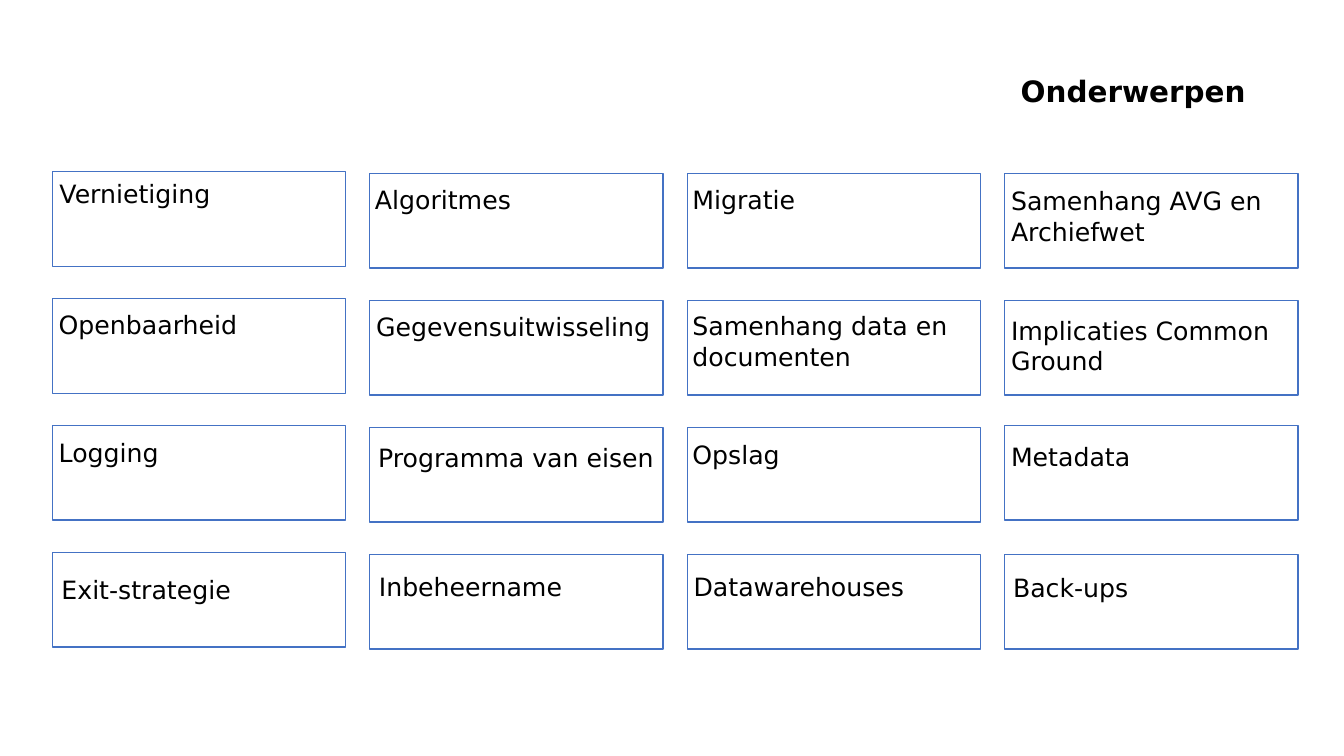
from dataclasses import dataclass

import pptx
import pptx.dml.color
import pptx.enum.shapes
import pptx.enum.text
import pptx.util
from pptx.util import Cm


@dataclass(frozen=True)
class Theme:
    font: str = "DejaVu Sans"
    text: str = "000000"
    fill: str = "FFFFFF"
    line: str = "4472C4"
    title_size: float = 21
    topic_size: float = 18
    line_width: float = 1


@dataclass(frozen=True)
class Topic:
    label: str
    dx: float
    dy: float
    lines: int = 1
    raised: bool = False


THEME = Theme()
LEFT, TOP = 1.32, 4.37
COLUMN_STEP, ROW_STEP = 8, 3.2
BOX_WIDTH, BOX_HEIGHT = 7.39, 2.39
RAISE, INSET = 0.05, 0.13
LABEL_HEIGHTS = {1: 1.02, 2: 1.8}

COLUMNS = [
    [
        Topic("Vernietiging", 0.05, 0, raised=True),
        Topic("Openbaarheid", 0.03, 0.1, raised=True),
        Topic("Logging", 0.03, 0.13, raised=True),
        Topic("Exit-strategie", 0.1, 0.38, raised=True),
    ],
    [
        Topic("Algoritmes", 0, 0.15),
        Topic("Gegevensuitwisseling", 0.03, 0.15),
        Topic("Programma van eisen", 0.08, 0.25),
        Topic("Inbeheername", 0.1, 0.3),
    ],
    [
        Topic("Migratie", 0, 0.15),
        Topic("Samenhang data en documenten", 0, 0.13, lines=2),
        Topic("Opslag", 0, 0.18),
        Topic("Datawarehouses", 0.03, 0.3),
    ],
    [
        Topic("Samenhang AVG en Archiefwet", 0.03, 0.18, lines=2),
        Topic("Implicaties Common Ground", 0.03, 0.25, lines=2),
        Topic("Metadata", 0.03, 0.23, raised=True),
        Topic("Back-ups", 0.08, 0.33),
    ],
]


def rgb(value: str) -> pptx.dml.color.RGBColor:
    return pptx.dml.color.RGBColor.from_string(value)


def set_all(target: object, values: dict) -> None:
    for name, value in values.items():
        setattr(target, name, value)


def add_text(s, text: str, x: float, y: float, w: float, h: float,
             size: float, frame: dict, paragraph: dict, bold: bool = False) -> None:
    tf = s.shapes.add_textbox(Cm(x), Cm(y), Cm(w), Cm(h)).text_frame
    margins = {f"margin_{side}": Cm(INSET) for side in ("left", "top", "right", "bottom")}
    set_all(tf, {"word_wrap": True, **margins, **frame})
    p = tf.paragraphs[0]
    set_all(p, paragraph)
    r = p.add_run()
    r.text = text
    set_all(r.font, {"name": THEME.font, "size": pptx.util.Pt(size), "bold": bold})
    r.font.color.rgb = rgb(THEME.text)


def add_title(s, text: str) -> None:
    add_text(s, text, 5.79, 1.78, 25.73, 1.14, THEME.title_size,
             {"vertical_anchor": pptx.enum.text.MSO_ANCHOR.MIDDLE},
             {"alignment": pptx.enum.text.PP_ALIGN.RIGHT, "line_spacing": 0.9}, bold=True)


def add_box(s, x: float, y: float) -> None:
    sp = s.shapes.add_shape(pptx.enum.shapes.MSO_SHAPE.RECTANGLE,
                            Cm(x), Cm(y), Cm(BOX_WIDTH), Cm(BOX_HEIGHT))
    sp.shadow.inherit = False
    sp.fill.solid()
    sp.fill.fore_color.rgb = rgb(THEME.fill)
    sp.line.color.rgb = rgb(THEME.line)
    sp.line.width = pptx.util.Pt(THEME.line_width)


def add_topic(s, topic: Topic, column: int, row: int) -> None:
    x, y = LEFT + column * COLUMN_STEP, TOP + row * ROW_STEP
    add_box(s, x, y - RAISE if topic.raised else y)
    add_text(s, topic.label, x + topic.dx, y + topic.dy, BOX_WIDTH,
             LABEL_HEIGHTS[topic.lines], THEME.topic_size,
             {"auto_size": pptx.enum.text.MSO_AUTO_SIZE.SHAPE_TO_FIT_TEXT},
             {"alignment": pptx.enum.text.PP_ALIGN.LEFT})


def main() -> None:
    prs = pptx.Presentation()
    set_all(prs, {"slide_width": Cm(33.87), "slide_height": Cm(19.05)})
    s = prs.slides.add_slide(prs.slide_layouts[6])
    add_title(s, "Onderwerpen")
    for column, topics in enumerate(COLUMNS):
        for row, topic in enumerate(topics):
            add_topic(s, topic, column, row)
    prs.save("out.pptx")


if __name__ == "__main__":
    main()
